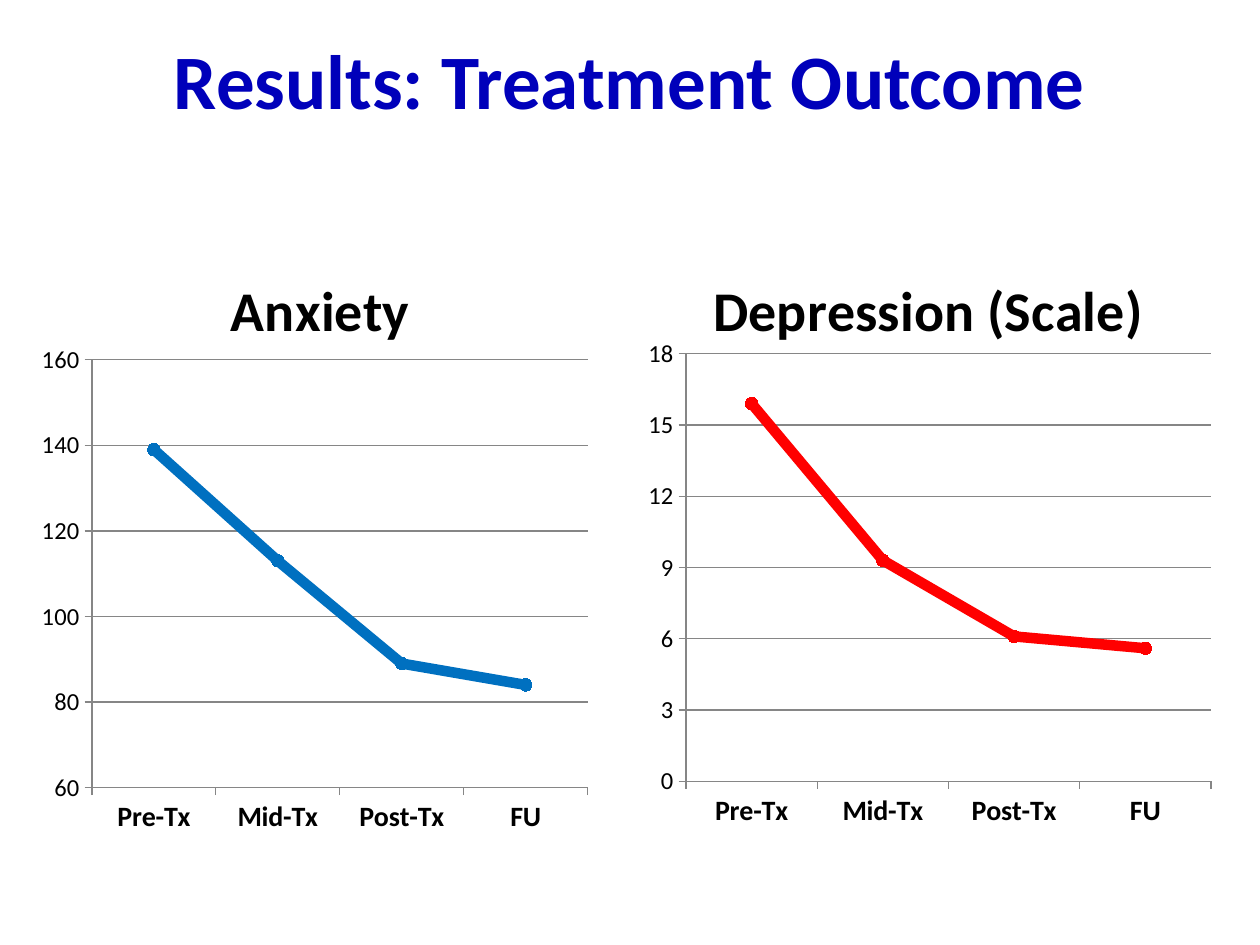
from lxml import etree
from pptx import Presentation
from pptx import util as u
from pptx.chart.data import CategoryChartData
from pptx.dml.color import RGBColor
from pptx.enum import chart as ch, text
from pptx.oxml import parse_xml
from pptx.oxml.ns import nsdecls, qn

FONT = "Calibri"
COLORS = {"title": "0000BA", "text": "000000", "grid": "868686",
          "anxiety": "0070C0", "depression": "FF0000"}
STAGES = ["Pre-Tx", "Mid-Tx", "Post-Tx", "FU"]


def rgb(name):
    return RGBColor.from_string(COLORS[name])


def style_font(font, size, color="text", bold=False):
    font.name = FONT
    font.size = u.Pt(size)
    font.bold = bold
    font.color.rgb = rgb(color)


def add_title(slide, words):
    sp = slide.shapes.title
    sp.left, sp.top, sp.width, sp.height = u.Cm(1.27), u.Cm(0), u.Cm(22.86), u.Cm(3.18)
    tf = sp.text_frame
    tf.vertical_anchor = text.MSO_ANCHOR.MIDDLE
    p = tf.paragraphs[0]
    p.alignment = text.PP_ALIGN.CENTER
    r = p.add_run()
    r.text = words
    style_font(r.font, 44, "title", True)


def set_chart_title(chart, words):
    p = chart.chart_title.text_frame.paragraphs[0]
    r = p.add_run()
    r.text = words
    style_font(r.font, 32, bold=True)


def set_plot_layout(chart, x, y, w, h):
    """Place the inner plot area, in fractions of the chart area."""
    area = chart.element.chart.plotArea
    for old in area.findall(qn("c:layout")):
        area.remove(old)
    layout = parse_xml(f"<c:layout {nsdecls('c')}><c:manualLayout/></c:layout>")
    for tag, val in [("layoutTarget", "inner"), ("xMode", "edge"), ("yMode", "edge"),
                     ("x", x), ("y", y), ("w", w), ("h", h)]:
        etree.SubElement(layout[0], qn(f"c:{tag}")).set("val", str(val))
    area.insert(0, layout)


def style_axis(axis, size, bold=False):
    axis.major_tick_mark = ch.XL_TICK_MARK.OUTSIDE
    axis.minor_tick_mark = ch.XL_TICK_MARK.NONE
    axis.format.line.color.rgb = rgb("grid")
    axis.format.line.width = u.Pt(0.75)
    style_font(axis.tick_labels.font, size, bold=bold)


def add_line_chart(slide, name, values, color, left, width, scale, plot):
    data = CategoryChartData()
    data.categories = STAGES
    data.add_series(name, values)
    chart = slide.shapes.add_chart(ch.XL_CHART_TYPE.LINE_MARKERS, u.Cm(left), u.Cm(4.88),
                                   u.Cm(width), u.Cm(12.5), data).chart
    style_font(chart.font, 10)
    chart.has_legend = False
    set_chart_title(chart, name)
    set_plot_layout(chart, *plot)

    # Axes
    style_axis(chart.category_axis, 16, True)
    axis = chart.value_axis
    style_axis(axis, 14)
    axis.minimum_scale, axis.maximum_scale, axis.major_unit = scale
    axis.tick_labels.number_format = "General"
    axis.tick_labels.number_format_is_linked = False
    axis.major_gridlines.format.line.color.rgb = rgb("grid")
    axis.major_gridlines.format.line.width = u.Pt(0.75)

    # Line and markers
    chart.plots[0].vary_by_categories = False
    series = chart.plots[0].series[0]
    series.smooth = False
    series.format.line.color.rgb = rgb(color)
    series.format.line.width = u.Pt(6)
    marker = series.marker
    marker.style = ch.XL_MARKER_STYLE.CIRCLE
    marker.size = 7
    marker.format.fill.solid()
    marker.format.fill.fore_color.rgb = rgb(color)
    marker.format.line.color.rgb = rgb(color)


def main():
    prs = Presentation()
    prs.slide_width, prs.slide_height = u.Cm(25.4), u.Cm(19.05)
    slide = prs.slides.add_slide(prs.slide_layouts[5])
    add_title(slide, "Results: Treatment Outcome")

    # Outcome measures side by side
    add_line_chart(slide, "Anxiety", [139, 113, 89, 84], "anxiety", 0.84, 11.23,
                   (60, 160, 20), (0.09, 0.19, 0.89, 0.69))
    add_line_chart(slide, "Depression (Scale)", [15.9, 9.3, 6.1, 5.6], "depression",
                   12.9, 11.63, (0, 18, 3), (0.08, 0.18, 0.91, 0.69))
    prs.save("out.pptx")


if __name__ == "__main__":
    main()
